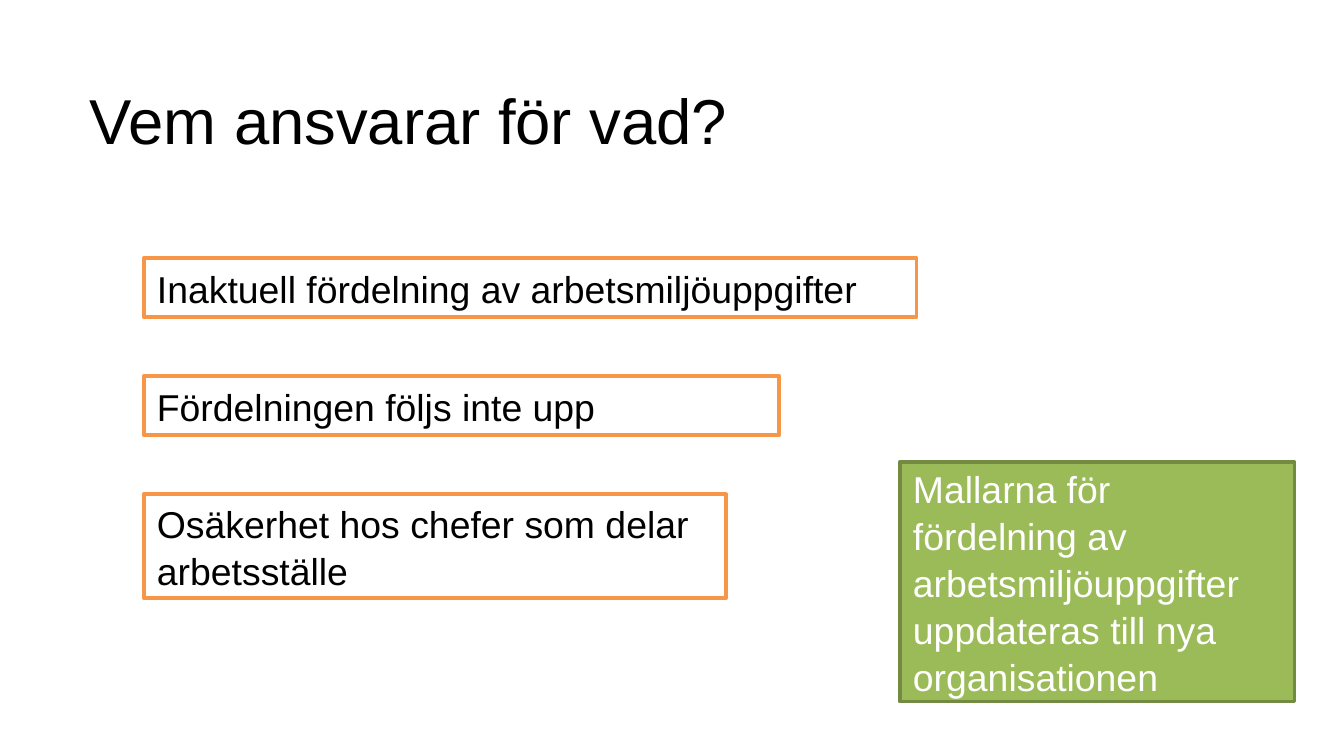
from pptx import Presentation
from pptx.dml.color import RGBColor
from pptx.enum import shapes, text
from pptx.util import Pt


def tint(code):
    """Turn a hex string into a colour."""
    return RGBColor.from_string(code)


def write(shape, words, size, color):
    """Put one left-aligned paragraph into a shape."""
    frame = shape.text_frame
    frame.word_wrap = True
    frame.vertical_anchor = text.MSO_ANCHOR.MIDDLE
    para = frame.paragraphs[0]
    para.text = words
    para.alignment = text.PP_ALIGN.LEFT
    para.font.name = "Arial"
    para.font.size = Pt(size)
    para.font.color.rgb = tint(color)
    return para


def title(slide, box, words):
    """Place the heading in its box."""
    write(slide.shapes.add_textbox(*map(Pt, box)), words, 34, "000000")


def panel(slide, box, words, fill, edge, color):
    """Place a bordered rectangle with text in its box."""
    rect = slide.shapes.add_shape(shapes.MSO_SHAPE.RECTANGLE, *map(Pt, box))
    rect.shadow.inherit = False
    rect.fill.solid()
    rect.fill.fore_color.rgb = tint(fill)
    rect.line.color.rgb = tint(edge)
    rect.line.width = Pt(2)
    write(rect, words, 20, color).line_spacing = 1.05


def issues(slide, left, top, step, items):
    """Stack the issue panels at an even step."""
    for row, (wide, high, words) in enumerate(items):
        box = (left, top + row * step, wide, high)
        panel(slide, box, words, "FFFFFF", "F79646", "000000")


def main():
    """Build and save the slide."""
    deck = Presentation()
    deck.slide_width, deck.slide_height = Pt(720), Pt(405)
    slide = deck.slides.add_slide(deck.slide_layouts[6])
    title(slide, (41, 36.5, 644.5, 54.5), "Vem ansvarar för vad?")
    issues(slide, 77, 138.4, 63.2, [
        (414, 31.5, "Inaktuell fördelning av arbetsmiljöuppgifter"),
        (340.5, 31.5, "Fördelningen följs inte upp"),
        (312, 55.7, "Osäkerhet hos chefer som delar arbetsställe"),
    ])
    panel(slide, (482, 247.6, 211.5, 128.2),
          "Mallarna för fördelning av arbetsmiljöuppgifter "
          "uppdateras till nya organisationen",
          "9BBB59", "738A42", "FFFFFF")
    deck.save("out.pptx")


if __name__ == "__main__":
    main()
